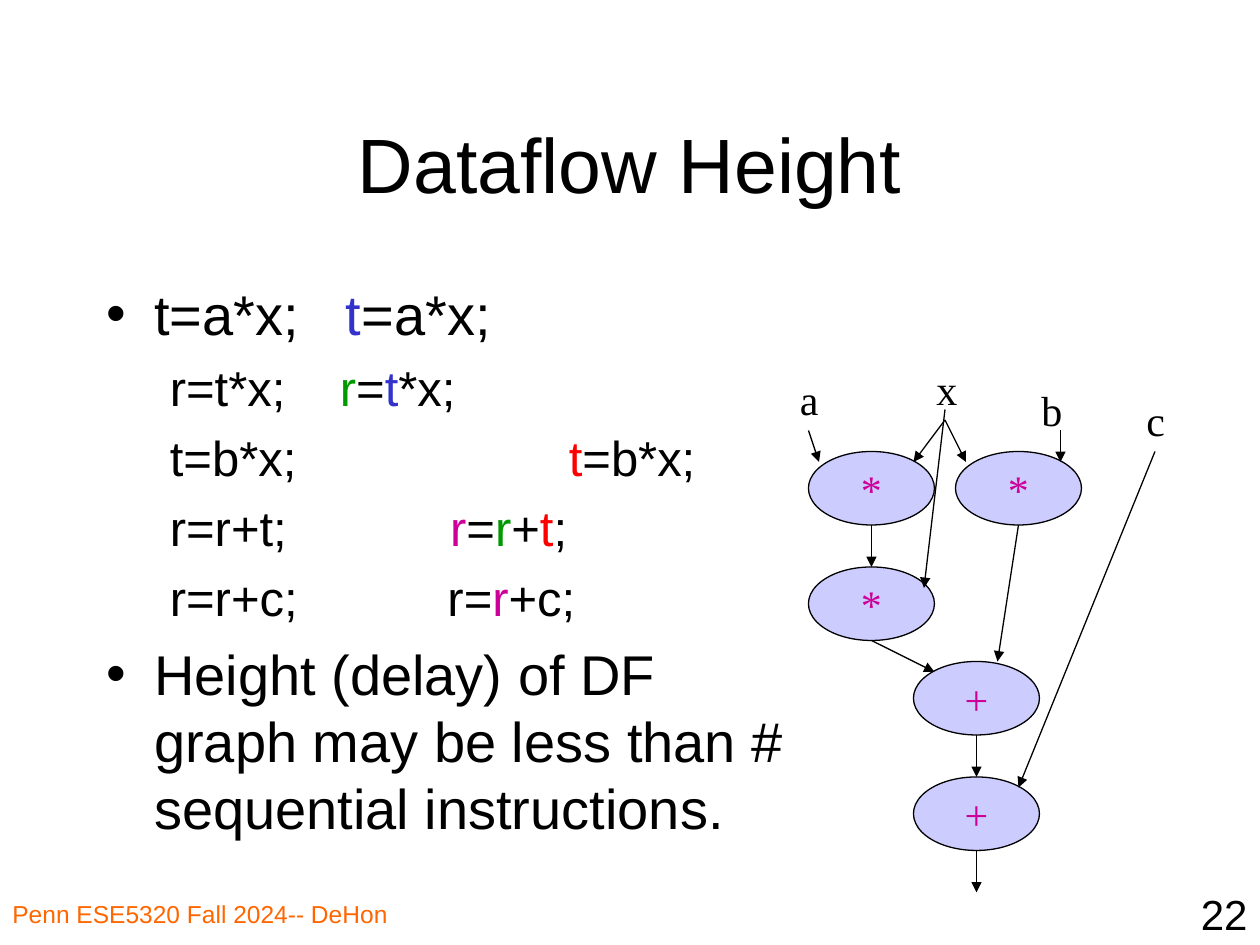
from lxml import etree
from pptx import Presentation
from pptx.enum import shapes, text
from pptx.dml.color import RGBColor
from pptx.oxml import ns
from pptx import util as u

PX = u.Inches(1) // 120
SANS, SERIF = "Arial", "Times New Roman"
COLORS = {
    "black": "000000", "orange": "FF6600", "blue": "3333CC", "green": "009900",
    "red": "FF0000", "magenta": "CC0099", "node": "CCCCFF",
}
SPACE_WIDTH = 0.278  # width of an Arial space, in ems
NODE_WIDTH, NODE_HEIGHT = 120, 70

# Each code line: left column, gap in space widths, coloured right column
CODE = [
    ("t=a*x;", 3, [("t", "blue"), ("=a*x;", "black")]),
    ("r=t*x;", 4, [("r", "green"), ("=", "black"), ("t", "blue"), ("*x;", "black")]),
    ("t=b*x;", 20, [("t", "red"), ("=b*x;", "black")]),
    ("r=r+t;", 12, [("r", "magenta"), ("=", "black"), ("r", "green"),
                    ("+", "black"), ("t", "red"), (";", "black")]),
    ("r=r+c;", 11, [("r=", "black"), ("r", "magenta"), ("+c;", "black")]),
]
CONCLUSION = "Height (delay) of DF graph may be less than # sequential instructions."

NODES = [("*", 770, 430), ("*", 910, 430), ("*", 770, 540), ("+", 870, 630), ("+", 870, 740)]
INPUTS = [("a", 750, 350), ("x", 880, 340), ("b", 980, 360), ("c", 1080, 370)]
ARROWS = [
    # between operations, and out of the last one
    (830, 500, 830, 540), (930, 700, 930, 740), (830, 610, 890, 640),
    (970, 500, 950, 630), (930, 810, 930, 850),
    # from the inputs c, b, x (three times) and a
    (1100, 430, 970, 750), (1010, 410, 1010, 440), (900, 400, 870, 440),
    (900, 400, 920, 440), (900, 390, 880, 560), (770, 410, 780, 440),
]


def color(name):
    return RGBColor.from_string(COLORS[name])


def style_run(run, size, color_name, font=SANS):
    run.font.name = font
    run.font.size = u.Pt(size)
    run.font.color.rgb = color(color_name)


def add_run(paragraph, words, size, color_name):
    run = paragraph.add_run()
    run.text = words
    style_run(run, size, color_name)
    return run


def add_label(slide, words, box, size, color_name="black", font=SANS, align="LEFT",
              anchor="TOP", wrap=True):
    label = slide.shapes.add_textbox(*(v * PX for v in box))
    frame = label.text_frame
    frame.text = words
    frame.word_wrap = wrap
    frame.vertical_anchor = text.MSO_ANCHOR[anchor]
    paragraph = frame.paragraphs[0]
    paragraph.alignment = text.PP_ALIGN[align]
    style_run(paragraph.runs[0], size, color_name, font)


def format_paragraph(paragraph, size, bulleted):
    paragraph.level = 0 if bulleted else 1
    paragraph.space_before = u.Pt(round(size * 0.23, 1))
    properties = paragraph._p.get_or_add_pPr()
    margin, indent = (45, -45) if bulleted else (97, -37)
    properties.set("marL", str(margin * PX))
    properties.set("indent", str(indent * PX))
    if bulleted:
        etree.SubElement(properties, ns.qn("a:buFont")).set("typeface", SANS)
        etree.SubElement(properties, ns.qn("a:buChar")).set("char", "•")
    else:
        etree.SubElement(properties, ns.qn("a:buNone"))


def add_code_line(paragraph, left, gap, right, size):
    add_run(paragraph, left, size, "black")
    # One space, widened by character spacing, parts the two columns
    space = add_run(paragraph, " ", size, "black")
    extra = (gap - 1) * size * SPACE_WIDTH
    space._r.get_or_add_rPr().set("spc", str(round(extra * 100)))
    for words, color_name in right:
        add_run(paragraph, words, size, color_name)


def add_body(slide):
    body = slide.shapes.add_textbox(*(v * PX for v in (90, 260, 680, 570)))
    frame = body.text_frame
    frame.word_wrap = True
    for index, (left, gap, right) in enumerate(CODE):
        paragraph = frame.add_paragraph() if index else frame.paragraphs[0]
        size = 28 if index else 32
        format_paragraph(paragraph, size, bulleted=index == 0)
        add_code_line(paragraph, left, gap, right, size)
    paragraph = frame.add_paragraph()
    format_paragraph(paragraph, 32, bulleted=True)
    add_run(paragraph, CONCLUSION, 32, "black")


def add_node(slide, operator, left, top):
    node = slide.shapes.add_shape(
        shapes.MSO_SHAPE.OVAL, left * PX, top * PX, NODE_WIDTH * PX, NODE_HEIGHT * PX)
    node.shadow.inherit = False
    node.fill.solid()
    node.fill.fore_color.rgb = color("node")
    node.line.color.rgb = color("black")
    node.line.width = u.Pt(0.75)
    frame = node.text_frame
    frame.text = operator
    frame.word_wrap = False
    frame.vertical_anchor = text.MSO_ANCHOR.MIDDLE
    paragraph = frame.paragraphs[0]
    paragraph.alignment = text.PP_ALIGN.CENTER
    style_run(paragraph.runs[0], 24, "magenta", SERIF)


def add_arrow(slide, *ends):
    arrow = slide.shapes.add_connector(
        shapes.MSO_CONNECTOR.STRAIGHT, *(v * PX for v in ends))
    arrow.line.color.rgb = color("black")
    arrow.line.width = u.Pt(0.75)
    line = arrow.line._get_or_add_ln()
    etree.SubElement(line, ns.qn("a:tailEnd")).set("type", "triangle")
    etree.SubElement(arrow._element.spPr, ns.qn("a:effectLst"))


def main():
    presentation = Presentation()
    presentation.slide_width, presentation.slide_height = 1200 * PX, 900 * PX
    slide = presentation.slides.add_slide(presentation.slide_layouts[6])

    # Footer, slide number, title and body
    add_label(slide, "Penn ESE5320 Fall 2024-- DeHon", (0, 850, 460, 50), 14, "orange")
    add_label(slide, "22", (950, 840, 250, 60), 24, align="RIGHT")
    add_label(slide, "Dataflow Height", (90, 80, 1020, 150), 44,
              align="CENTER", anchor="MIDDLE")
    add_body(slide)

    # Dataflow graph
    for node in NODES:
        add_node(slide, *node)
    for name, left, top in INPUTS:
        add_label(slide, name, (left, top, 43, 60), 24, font=SERIF, wrap=False)
    for arrow in ARROWS:
        add_arrow(slide, *arrow)

    presentation.save("out.pptx")


if __name__ == "__main__":
    main()
